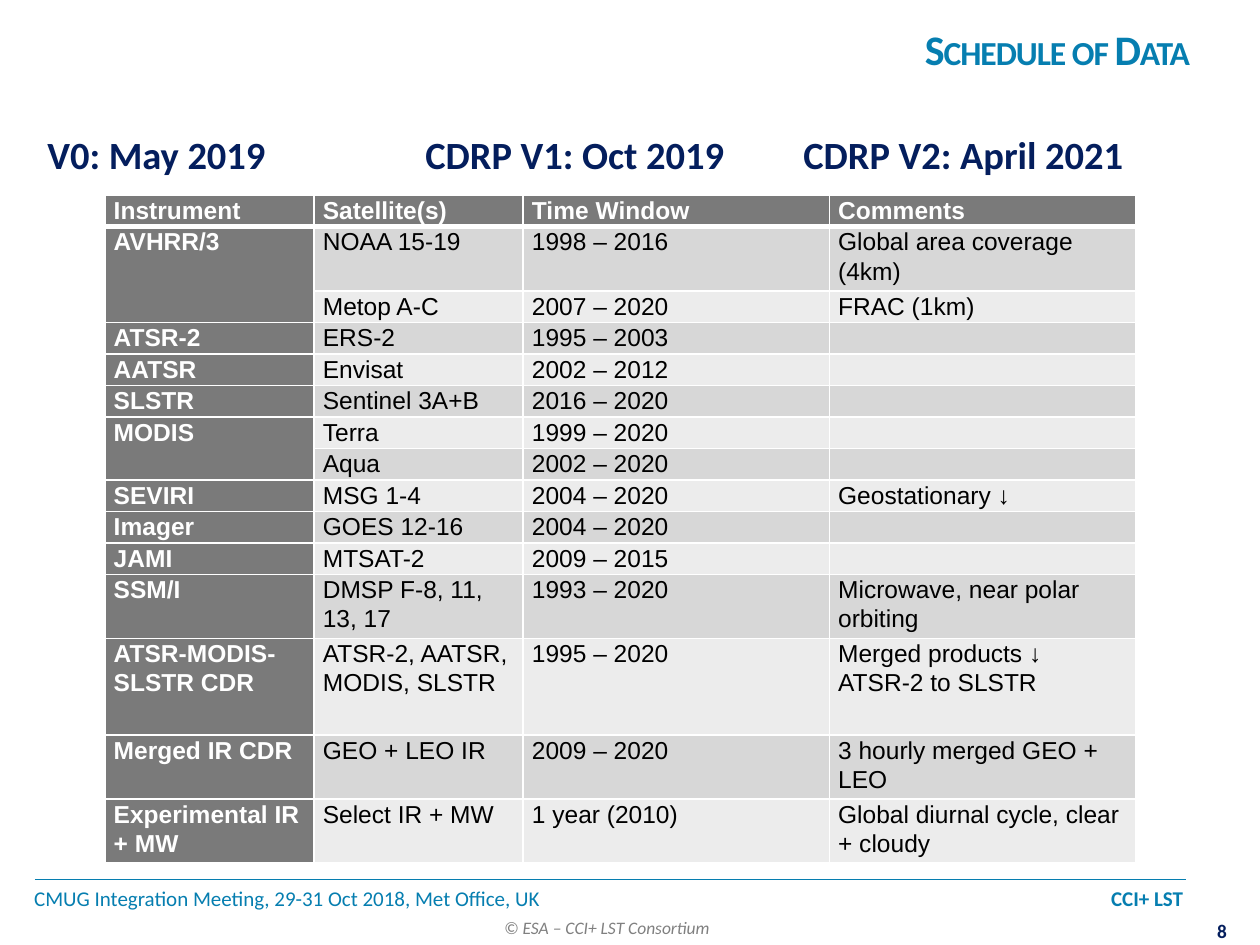
from dataclasses import dataclass

from lxml.etree import SubElement
from pptx import Presentation
from pptx.dml.color import RGBColor
from pptx.enum.shapes import MSO_CONNECTOR
from pptx.enum.text import MSO_ANCHOR, PP_ALIGN
from pptx.oxml.ns import qn
from pptx.util import Pt


@dataclass(frozen=True)
class Theme:
    teal: str = "067EB0"
    navy: str = "041E5D"
    grey: str = "808080"
    white: str = "FFFFFF"
    black: str = "000000"
    head_fill: str = "7A7A7A"
    bands: tuple = ("D7D7D7", "ECECEC")
    font: str = "Calibri"
    table_font: str = "Arial"
    title: float = 24
    versions: float = 22
    table: float = 14
    footer: float = 12
    page: float = 11
    credit: float = 10


T = Theme()

# Column widths, and row heights by number of text lines
COLUMNS = (119.5, 119.5, 175, 175)
LINE_HEIGHTS = {1: 17.8, 2: 36.6, 3: 55.2}
TIGHT_ROW = 16.8

# Lines of height, then the cells; None continues the cell above
ROWS = [
    (1, "Instrument", "Satellite(s)", "Time Window", "Comments"),
    (2, "AVHRR/3", "NOAA 15-19", "1998 – 2016", "Global area coverage (4km)"),
    (1, None, "Metop A-C", "2007 – 2020", "FRAC (1km)"),
    (1, "ATSR-2", "ERS-2", "1995 – 2003", ""),
    (1, "AATSR", "Envisat", "2002 – 2012", ""),
    (1, "SLSTR", "Sentinel 3A+B", "2016 – 2020", ""),
    (1, "MODIS", "Terra", "1999 – 2020", ""),
    (1, None, "Aqua", "2002 – 2020", ""),
    (1, "SEVIRI", "MSG 1-4", "2004 – 2020", "Geostationary ↓"),
    (1, "Imager", "GOES 12-16", "2004 – 2020", ""),
    (1, "JAMI", "MTSAT-2", "2009 – 2015", ""),
    (2, "SSM/I", "DMSP F-8, 11, 13, 17", "1993 – 2020", "Microwave, near polar orbiting"),
    (3, "ATSR-MODIS-SLSTR CDR", "ATSR-2, AATSR, MODIS, SLSTR", "1995 – 2020",
     "Merged products ↓\nATSR-2 to SLSTR"),
    (2, "Merged IR CDR", "GEO + LEO IR", "2009 – 2020", "3 hourly merged GEO + LEO"),
    (2, "Experimental IR + MW", "Select IR + MW", "1 year (2010)",
     "Global diurnal cycle, clear + cloudy"),
]


def add_run(p, text, size, color, bold=False, italic=False, font=T.font):
    r = p.add_run()
    r.text = text
    r.font.name = font
    r.font.size = Pt(size)
    r.font.bold = bold
    r.font.italic = italic
    r.font.color.rgb = RGBColor.from_string(color)
    return r


def add_box(s, box, insets=(7.2, 3.6), wrap=True):
    """Add a text box and return its text frame."""
    tf = s.shapes.add_textbox(*map(Pt, box)).text_frame
    tf.word_wrap = wrap
    tf.margin_left = tf.margin_right = Pt(insets[0])
    tf.margin_top = tf.margin_bottom = Pt(insets[1])
    return tf


def add_tabs(p, *stops):
    tabs = SubElement(p._p.get_or_add_pPr(), qn("a:tabLst"))
    for position, align in stops:
        SubElement(tabs, qn("a:tab"), pos=str(Pt(position)), algn=align)


def add_title(s, box):
    tf = add_box(s, box)
    tf.vertical_anchor = MSO_ANCHOR.MIDDLE
    p = tf.paragraphs[0]
    p.alignment = PP_ALIGN.RIGHT
    r = add_run(p, "Schedule of Data", T.title, T.teal, bold=True)
    r.font._element.set("cap", "small")
    r.font._element.set("spc", "-60")


def add_versions(s, box):
    p = add_box(s, box).paragraphs[0]
    p.space_after = Pt(6)
    add_tabs(p, (216, "l"), (432, "l"))
    add_run(p, "V0: May 2019\tCDRP V1: Oct 2019\tCDRP V2: April 2021",
            T.versions, T.navy, bold=True)


def set_borders(cell, bottom):
    tc_pr = cell._tc.get_or_add_tcPr()
    for i, (side, width) in enumerate((("L", 1), ("R", 1), ("T", 1), ("B", bottom))):
        ln = tc_pr.makeelement(qn(f"a:ln{side}"), {"w": str(Pt(width))})
        fill = SubElement(ln, qn("a:solidFill"))
        SubElement(fill, qn("a:srgbClr"), val=T.white)
        tc_pr.insert(i, ln)


def fill_cell(cell, text, fill, color, bold, bottom):
    cell.margin_left = cell.margin_right = Pt(5)
    cell.margin_top = cell.margin_bottom = 0
    cell.fill.solid()
    cell.fill.fore_color.rgb = RGBColor.from_string(fill)
    set_borders(cell, bottom)
    tf = cell.text_frame
    for i, line in enumerate((text or "").split("\n")):
        p = tf.add_paragraph() if i else tf.paragraphs[0]
        p.line_spacing = 1.07
        if line:
            add_run(p, line, T.table, color, bold, font=T.table_font)
        else:
            # Keeps an empty cell from stretching its row
            SubElement(p._p, qn("a:endParaRPr"), sz=str(T.table * 100))


def add_schedule(s, left, top):
    heights = [TIGHT_ROW if row[1] == "SLSTR" else LINE_HEIGHTS[row[0]] for row in ROWS]
    size = map(Pt, (left, top, sum(COLUMNS), sum(heights)))
    table = s.shapes.add_table(len(ROWS), len(COLUMNS), *size).table
    for column, width in zip(table.columns, COLUMNS):
        column.width = Pt(width)
    for i, (_, *texts) in enumerate(ROWS):
        table.rows[i].height = Pt(heights[i])
        for j, text in enumerate(texts):
            head = i == 0 or j == 0
            fill = T.head_fill if head else T.bands[(i - 1) % 2]
            color = T.white if head else T.black
            fill_cell(table.cell(i, j), text, fill, color, head, 3 if i == 0 else 1)
            if text is None:
                table.cell(i - 1, j).merge(table.cell(i, j))


def add_footer(s, left, top, width):
    # Rule
    line = s.shapes.add_connector(MSO_CONNECTOR.STRAIGHT, Pt(left), Pt(top),
                                  Pt(left + width), Pt(top))
    line.line.color.rgb = RGBColor.from_string(T.teal)
    line.line.width = Pt(1)
    SubElement(line._element.spPr, qn("a:effectLst"))

    # Meeting and project
    p = add_box(s, (left - 0.5, top, width + 0.5, 21.6), (0, 3.6)).paragraphs[0]
    add_tabs(p, (656.6, "r"))
    add_run(p, "CMUG Integration Meeting, 29-31 Oct 2018, Met Office, UK\t", T.footer, T.teal)
    add_run(p, "CCI+ LST", T.footer, T.teal, bold=True)

    # Copyright line
    p = add_box(s, (left + 261, top + 18, 134, 19.4), wrap=False).paragraphs[0]
    add_run(p, "© ESA – CCI+ LST Consortium", T.credit, T.grey, italic=True)

    # Page number
    p = add_box(s, (left + width + 11.5, top + 22.5, 18.7, 13.7), (0, 0), False).paragraphs[0]
    p.alignment = PP_ALIGN.CENTER
    add_run(p, "8", T.page, T.navy, bold=True)


def main():
    prs = Presentation()
    prs.slide_width, prs.slide_height = Pt(720), Pt(540)
    s = prs.slides.add_slide(prs.slide_layouts[6])
    add_footer(s, 20, 502.5, 657.5)
    add_title(s, (252, 3.6, 425.5, 48.2))
    add_versions(s, (20, 71.3, 657.5, 130.3))
    add_schedule(s, 60, 111.6)
    prs.save("out.pptx")


if __name__ == "__main__":
    main()
